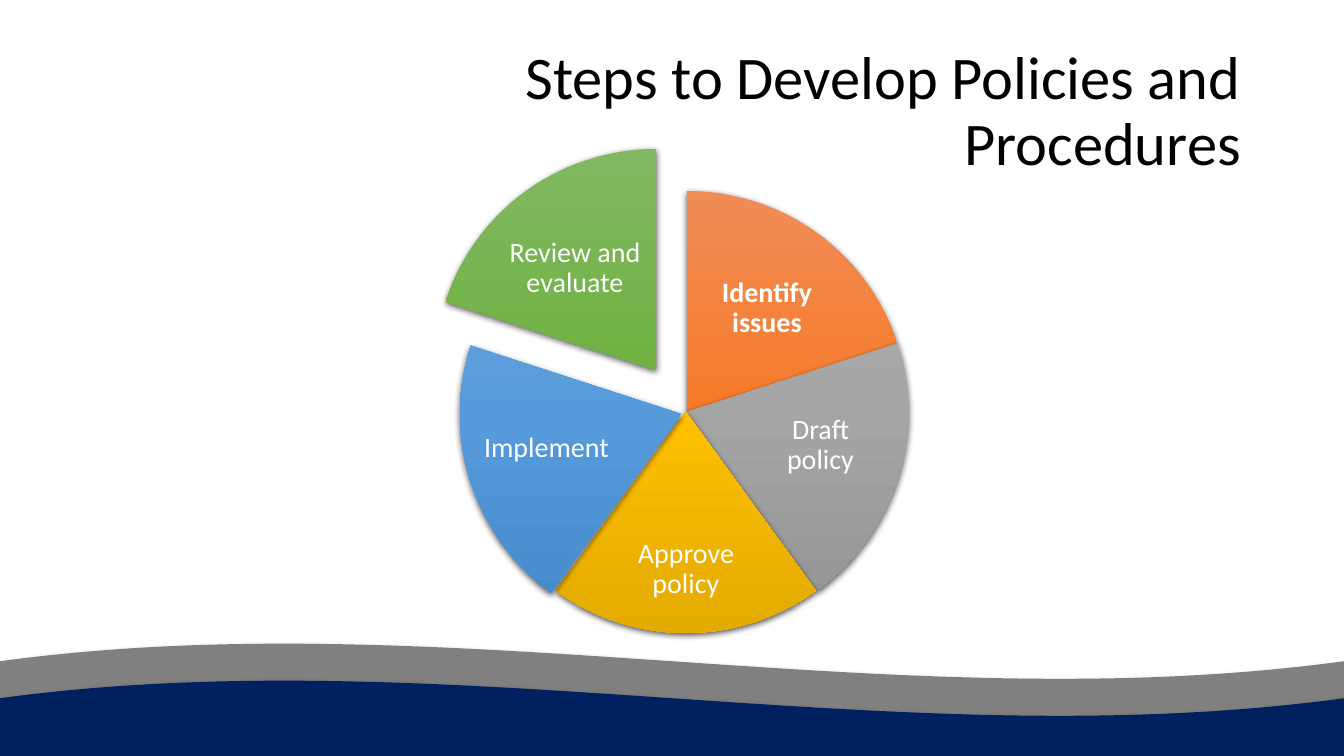
import pptx
import pptx.util
import pptx.dml.color
import pptx.enum.shapes
import pptx.enum.text
import pptx.oxml
import pptx.oxml.ns

RGB = pptx.dml.color.RGBColor
SHAPE = pptx.enum.shapes.MSO_SHAPE
ALIGN = pptx.enum.text.PP_ALIGN
MIDDLE = pptx.enum.text.MSO_ANCHOR.MIDDLE

BLACK = RGB(0x00, 0x00, 0x00)
WHITE = RGB(0xFF, 0xFF, 0xFF)
GREY = RGB(0x80, 0x80, 0x80)
NAVY = RGB(0x00, 0x20, 0x60)
ORANGES = RGB(0xF1, 0x8C, 0x57), RGB(0xF6, 0x7B, 0x28), RGB(0xE5, 0x6C, 0x19)
GREYS = RGB(0xAF, 0xAF, 0xAF), RGB(0xA5, 0xA5, 0xA5), RGB(0x93, 0x93, 0x93)
GOLDS = RGB(0xFF, 0xC6, 0x4B), RGB(0xFF, 0xC0, 0x00), RGB(0xE3, 0xAB, 0x00)
BLUES = RGB(0x71, 0xA6, 0xDB), RGB(0x55, 0x9B, 0xDB), RGB(0x44, 0x8A, 0xCA)
GREENS = RGB(0x81, 0xB8, 0x61), RGB(0x6F, 0xB2, 0x42), RGB(0x62, 0xA3, 0x36)

FONT = "Calibri"
SLIDE_W, SLIDE_H = 1344, 756
EMU_PER_PX = 12192000 / SLIDE_W
PIE_SIZE = 442
SLICE_DEGREES = 72
ADJUSTMENT_PER_DEGREE = 0.6

# text, gradient, pie corner, label box, bold
STEPS = [
    ("Identify issues", ORANGES, (466, 191), (692, 257, 150, 103), True),
    ("Draft policy", GREYS, (466, 191), (755, 390, 131, 111), False),
    ("Approve policy", GOLDS, (465, 191), (607, 522, 158, 95), False),
    ("Implement", BLUES, (460, 193), (481, 393, 131, 111), False),
    ("Review and evaluate", GREENS, (435, 149), (500, 217, 150, 103), False),
]


def px(*lengths):
    return [pptx.util.Emu(round(length * EMU_PER_PX)) for length in lengths]


def add_drawing_xml(shape, body):
    """Append one DrawingML element to the shape's properties."""
    tag, rest = body.split(" ", 1)
    namespace = pptx.oxml.ns.nsdecls("a")
    shape._element.spPr.append(pptx.oxml.parse_xml(f"<a:{tag} {namespace} {rest}"))


def add_shadow(shape, alpha, blur, distance):
    """Drop a black shadow straight down; alpha in percent, lengths in points."""
    shape.shadow.inherit = False
    effects = shape._element.spPr.find(pptx.oxml.ns.qn("a:effectLst"))
    effects.append(pptx.oxml.parse_xml(
        f'<a:outerShdw {pptx.oxml.ns.nsdecls("a")} blurRad="{round(blur * 12700)}" '
        f'dist="{round(distance * 12700)}" dir="5400000" algn="ctr" rotWithShape="0">'
        f'<a:srgbClr val="{BLACK}"><a:alpha val="{alpha * 1000}"/></a:srgbClr>'
        '</a:outerShdw>'))


def fill_gradient(shape, colours):
    """Fill from top to bottom with evenly spaced colours."""
    gap = 100000 // (len(colours) - 1)
    stops = "".join(f'<a:gs pos="{i * gap}"><a:srgbClr val="{colour}"/></a:gs>'
                    for i, colour in enumerate(colours))
    add_drawing_xml(shape, f'gradFill rotWithShape="1"><a:gsLst>{stops}</a:gsLst>'
                           '<a:lin ang="5400000" scaled="0"/></a:gradFill>')


def add_wave(slide, top, colour):
    wave = slide.shapes.add_shape(SHAPE.WAVE, *px(0, top, SLIDE_W, 146))
    wave.fill.solid()
    wave.fill.fore_color.rgb = colour
    wave.line.fill.background()
    add_shadow(wave, 32, 3.5, 2.2)


def format_text(frame, text, size, colour, align, bold=False):
    frame.word_wrap = True
    frame.vertical_anchor = MIDDLE
    frame.text = text
    paragraph = frame.paragraphs[0]
    paragraph.alignment = align
    paragraph.line_spacing = 0.9
    font = paragraph.font
    font.name, font.size, font.bold = FONT, pptx.util.Pt(size), bold
    font.color.rgb = colour


def add_title(slide, text):
    title = slide.shapes.title
    title.left, title.top, title.width, title.height = px(293, 40, 958, 146)
    format_text(title.text_frame, text, 43.2, BLACK, ALIGN.RIGHT)


def add_slice(slide, corner, start, colours):
    pie = slide.shapes.add_shape(SHAPE.PIE, *px(*corner, PIE_SIZE, PIE_SIZE))
    for i, angle in enumerate((start, start + SLICE_DEGREES)):
        pie.adjustments[i] = angle % 360 * ADJUSTMENT_PER_DEGREE
    fill_gradient(pie, colours)
    pie.line.fill.background()
    add_shadow(pie, 63, 4.5, 1.5)


def add_label(slide, box, text, bold):
    frame = slide.shapes.add_textbox(*px(*box)).text_frame
    frame.margin_left, frame.margin_top, frame.margin_right, frame.margin_bottom = px(3, 3, 3, 3)
    format_text(frame, text, 20, WHITE, ALIGN.CENTER, bold)


def main():
    deck = pptx.Presentation()
    deck.slide_width, deck.slide_height = px(SLIDE_W, SLIDE_H)
    slide = deck.slides.add_slide(deck.slide_layouts.get_by_name("Title Only"))
    add_wave(slide, 643, GREY)
    add_wave(slide, 680, NAVY)
    add_title(slide, "Steps to Develop Policies and Procedures")
    for i, (text, colours, corner, box, bold) in enumerate(STEPS):
        add_slice(slide, corner, 270 + i * SLICE_DEGREES, colours)
        add_label(slide, box, text, bold)
    deck.save("out.pptx")


if __name__ == "__main__":
    main()
